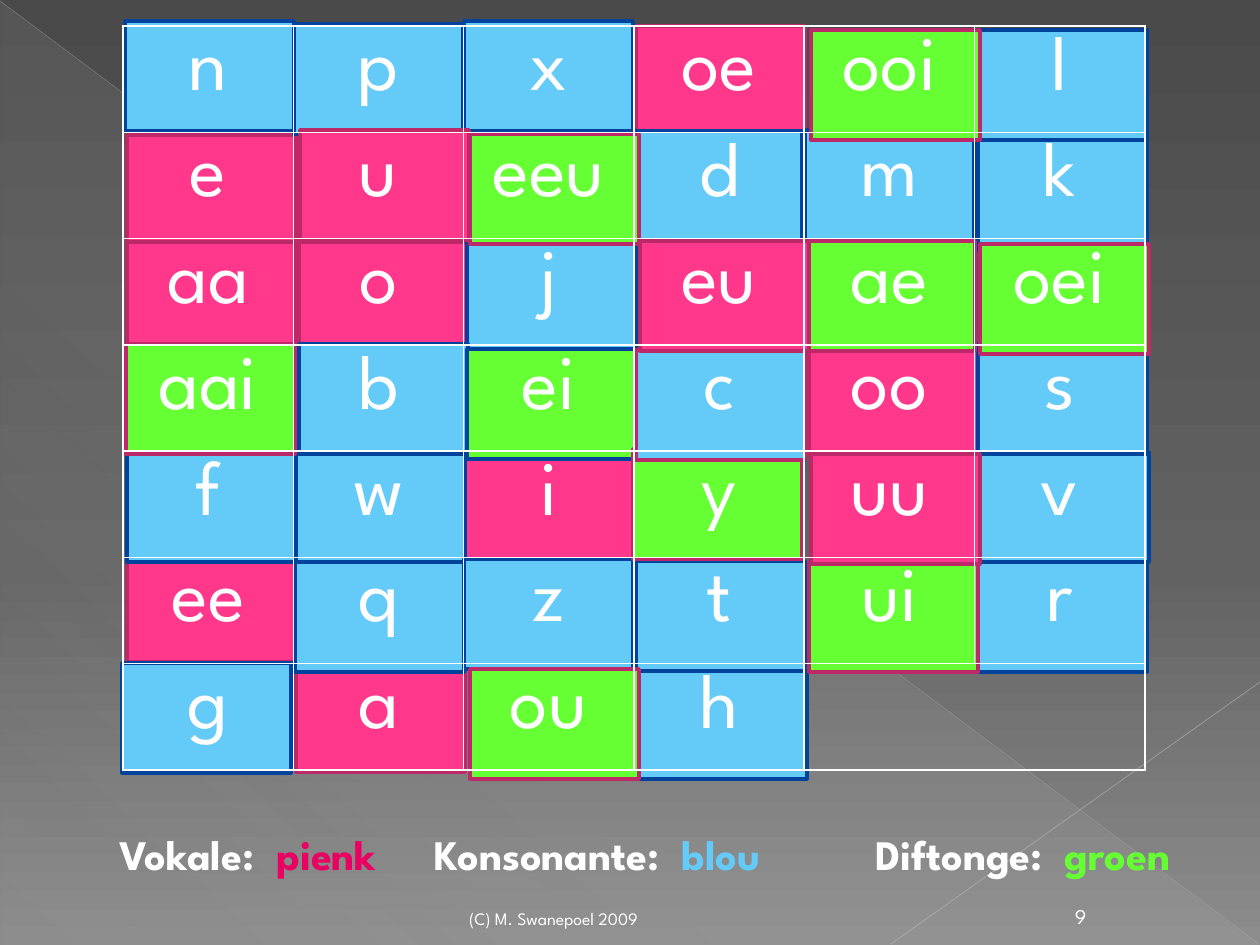
from lxml import etree
from pptx import Presentation
from pptx.dml.color import RGBColor
from pptx.enum.shapes import MSO_CONNECTOR, MSO_SHAPE
from pptx.enum.text import MSO_ANCHOR, PP_ALIGN
from pptx.oxml.ns import qn
from pptx.util import Emu, Pt

LEFT, CENTER, RIGHT = PP_ALIGN.LEFT, PP_ALIGN.CENTER, PP_ALIGN.RIGHT
TOP, BOTTOM = MSO_ANCHOR.TOP, MSO_ANCHOR.BOTTOM
RECTANGLE, TRIANGLE = MSO_SHAPE.RECTANGLE, MSO_SHAPE.RIGHT_TRIANGLE
STRAIGHT = MSO_CONNECTOR.STRAIGHT

FONT = "League Spartan"
COLORS = {
    "white": "FFFFFF", "pink": "FF388C", "pink_text": "E90062", "pink_edge": "BD2968",
    "blue": "64CAF8", "blue_edge": "00439C", "green": "66FF33",
    "dark": "4A4A4A", "middle": "626262", "light": "8C8C8C",
    "sheen": "D2D2D2", "ray": "BFBFBF", "ray_low": "C6C6C6",
}

BACKDROP = [(0, "dark", 100), (60, "middle", 100), (100, "light", 100)]
SHEEN = [(0, "sheen", 10), (70, "sheen", 8), (100, "sheen", 1)]
RAYS = [
    ((0, 1), (1259, 944), "ray", 0.39, 35),
    ((1260, 682), (891, 944), "ray_low", 0.47, 45),
]

LETTERS = [
    ["n", "p", "x", "oe", "ooi", "l"],
    ["e", "u", "eeu", "d", "m", "k"],
    ["aa", "o", "j", "eu", "ae", "oei"],
    ["aai", "b", "ei", "c", "oo", "s"],
    ["f", "w", "i", "y", "uu", "v"],
    ["ee", "q", "z", "t", "ui", "r"],
    ["g", "a", "ou", "h"],
]
TABLE_BOX = (123, 26, 1022, 744)

TILE_SIZE = (169, 110)
TILES = [
    ("pink", "pink_edge", [
        (127, 135), (299, 242), (296, 662), (127, 552),
        (809, 344), (636, 26), (127, 242), (464, 452)]),
    ("blue", "blue_edge", [
        (125, 21), (638, 669), (636, 561), (978, 562), (980, 452), (978, 344),
        (467, 239), (296, 452), (127, 452), (299, 344), (464, 21), (633, 131),
        (805, 130), (978, 140), (978, 30), (294, 24), (464, 559), (295, 562),
        (122, 663)]),
    ("green", "blue_edge", [(467, 349)]),
    ("pink", "pink_edge", [(300, 130)]),
    ("green", "pink_edge", [
        (811, 30), (806, 241), (470, 134), (633, 449),
        (980, 244), (126, 344), (809, 562)]),
    ("blue", "pink_edge", [(636, 350)]),
    ("green", "pink_edge", [(470, 669)]),
    ("pink", "pink_edge", [(811, 454), (640, 241)]),
]

TEXTS = [
    ((63, 893, 587, 42), RIGHT, BOTTOM, 10, False, [("(C) M. Swanepoel 2009", "white")]),
    ((1046, 893, 69, 42), CENTER, BOTTOM, 12, False, [("9", "white")]),
    ((15, 822, 1260, 63), CENTER, TOP, 24, True, [
        ("Vokale:  ", "white"), ("pienk\t", "pink_text"),
        ("Konsonante:  ", "white"), ("blou\t\t", "blue"),
        ("Diftonge:  ", "white"), ("groen", "green")]),
]


def px(value):
    return Emu(round(value * 914400 / 126))


def rgb(name):
    return RGBColor.from_string(COLORS[name])


def add_color(parent, name, alpha=100):
    color = etree.SubElement(parent, qn("a:srgbClr"), val=COLORS[name])
    if alpha < 100:
        etree.SubElement(color, qn("a:alpha"), val=str(alpha * 1000))


def swap_for_gradient(solid, stops, angle):
    gradient = etree.Element(qn("a:gradFill"), rotWithShape="1")
    stop_list = etree.SubElement(gradient, qn("a:gsLst"))
    for position, name, alpha in stops:
        stop = etree.SubElement(stop_list, qn("a:gs"), pos=str(position * 1000))
        add_color(stop, name, alpha)
    etree.SubElement(gradient, qn("a:lin"), ang=str(angle * 60000), scaled="0")
    solid.getparent().replace(solid, gradient)


def add_block(page, kind, box, fill):
    block = page.shapes.add_shape(kind, *map(px, box))
    block.shadow.inherit = False
    block.fill.solid()
    block.fill.fore_color.rgb = rgb(fill)
    return block


def add_span(para, text, size, color, bold=False):
    span = para.add_run()
    span.text = text
    span.font.name = FONT
    span.font.size = Pt(size)
    span.font.bold = bold
    span.font.color.rgb = rgb(color)


def add_backdrop(page):
    page.background.fill.solid()
    swap_for_gradient(page.element.xpath(".//p:bgPr/a:solidFill")[0], BACKDROP, 90)
    sheen = add_block(page, TRIANGLE, (1, 2, 1258, 943), "sheen")
    sheen.line.fill.background()
    swap_for_gradient(sheen.element.spPr.find(qn("a:solidFill")), SHEEN, 133)
    for start, end, color, width, alpha in RAYS:
        ray = page.shapes.add_connector(STRAIGHT, *map(px, start + end))
        ray.line.width = Pt(width)
        ray.line.color.rgb = rgb(color)
        properties = ray.element.spPr
        tint = properties.find(".//" + qn("a:srgbClr"))
        etree.SubElement(tint, qn("a:alpha"), val=str(alpha * 1000))
        etree.SubElement(properties, qn("a:effectLst"))


def add_texts(page):
    for box, align, anchor, size, bold, spans in TEXTS:
        frame = page.shapes.add_textbox(*map(px, box)).text_frame
        frame.word_wrap = True
        frame.vertical_anchor = anchor
        para = frame.paragraphs[0]
        para.alignment = align
        for text, color in spans:
            add_span(para, text, size, color, bold)


def add_tiles(page):
    for fill, edge, places in TILES:
        for place in places:
            tile = add_block(page, RECTANGLE, place + TILE_SIZE, fill)
            tile.line.color.rgb = rgb(edge)
            tile.line.width = Pt(2)


def style_cell(cell):
    cell.margin_left = cell.margin_right = px(9)
    cell.margin_top = cell.margin_bottom = 0
    properties = cell._tc.get_or_add_tcPr()
    for side in ("a:lnL", "a:lnR", "a:lnT", "a:lnB"):
        border = etree.SubElement(properties, qn(side), w=str(Pt(1)))
        add_color(etree.SubElement(border, qn("a:solidFill")), "white")
    cell.fill.background()


def add_letter_table(page):
    rows, columns = len(LETTERS), len(LETTERS[0])
    table = page.shapes.add_table(rows, columns, *map(px, TABLE_BOX)).table
    table.first_row = table.horz_banding = False
    for column in table.columns:
        column.width = px(TABLE_BOX[2] / columns)
    for row in table.rows:
        row.height = px(TABLE_BOX[3] / rows)
    for cell in table.iter_cells():
        style_cell(cell)
    for row, letters in enumerate(LETTERS):
        for column, letter in enumerate(letters):
            para = table.cell(row, column).text_frame.paragraphs[0]
            para.alignment = CENTER
            para.line_spacing = 1.15
            para.space_before = Pt(6)
            add_span(para, letter, 44, "white")
    last = rows - 1
    table.cell(last, len(LETTERS[last])).merge(table.cell(last, columns - 1))


def main():
    deck = Presentation()
    deck.slide_width, deck.slide_height = px(1260), px(945)
    page = deck.slides.add_slide(deck.slide_layouts[6])
    add_backdrop(page)
    add_texts(page)
    add_tiles(page)
    add_letter_table(page)
    deck.save("out.pptx")


if __name__ == "__main__":
    main()
